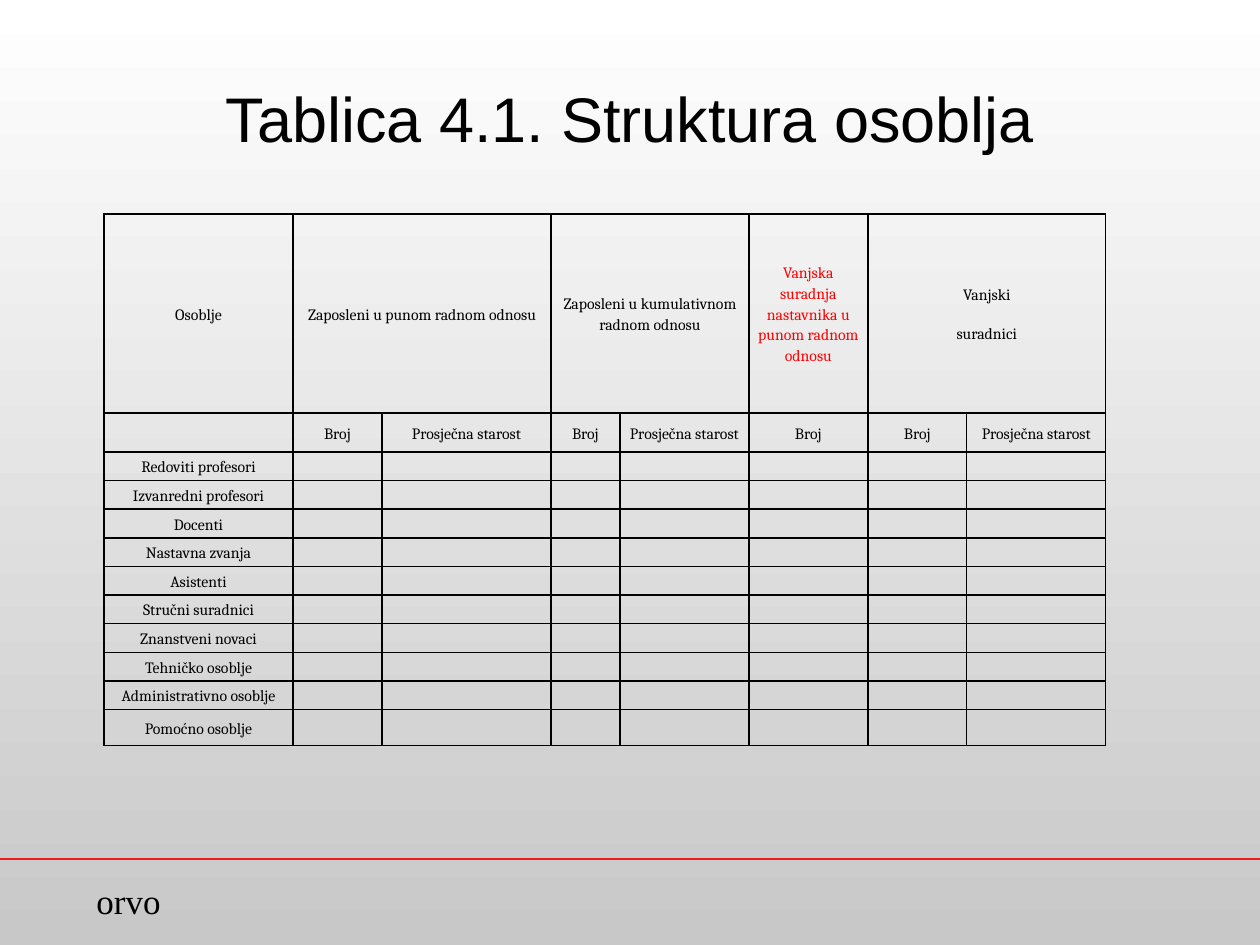
from lxml.etree import SubElement
from pptx import Presentation
from pptx.dml.color import RGBColor
from pptx.enum.shapes import MSO_CONNECTOR as Connector
from pptx.enum.text import MSO_ANCHOR as Anchor, PP_ALIGN as Align
from pptx.oxml.ns import qn
from pptx.util import Pt

BLACK = RGBColor(0, 0, 0)
RED = RGBColor(0xFF, 0, 0)
RULE_RED = RGBColor(0xEE, 0x1C, 0x1B)
WHITE = RGBColor(0xFF, 0xFF, 0xFF)
GREY = RGBColor(0xC8, 0xC8, 0xC8)

TITLE = "Tablica 4.1. Struktura osoblja"
AGENCY = "orvo"
GROUPS = [
    ("Osoblje", 1, BLACK),
    ("Zaposleni u punom radnom odnosu", 2, BLACK),
    ("Zaposleni u kumulativnom radnom odnosu", 2, BLACK),
    ("Vanjska suradnja nastavnika u punom radnom odnosu", 1, RED),
    ("Vanjski\nsuradnici", 2, BLACK),
]
MEASURES = ["", "Broj", "Prosječna starost", "Broj", "Prosječna starost",
            "Broj", "Broj", "Prosječna starost"]
STAFF = ["Redoviti profesori", "Izvanredni profesori", "Docenti",
         "Nastavna zvanja", "Asistenti", "Stručni suradnici",
         "Znanstveni novaci", "Tehničko osoblje",
         "Administrativno osoblje", "Pomoćno osoblje"]

PX = 914400 // 126
COLUMN_EDGES = [104, 293, 382, 551, 620, 749, 868, 967, 1106]
GROUP_TOP, MEASURE_TOP, STAFF_TOP, LAST_TOP, BOTTOM = 214, 413, 452, 710, 746
STAFF_STEP = (LAST_TOP - STAFF_TOP) / (len(STAFF) - 1)
ROW_EDGES = [GROUP_TOP, MEASURE_TOP,
             *(STAFF_TOP + STAFF_STEP * i for i in range(len(STAFF))), BOTTOM]

CELL_FORMAT = {"margin_left": 9 * PX, "margin_right": 9 * PX, "margin_top": 0,
               "margin_bottom": 0, "vertical_anchor": Anchor.MIDDLE}
CELL_PARAGRAPH = {"alignment": Align.CENTER, "line_spacing": 1.15,
                  "space_after": Pt(10)}


def apply(target, values):
    for name, value in values.items():
        setattr(target, name, value)


def set_font(run, face, size, color):
    apply(run.font, {"name": face, "size": Pt(size), "bold": False})
    run.font.color.rgb = color


def add_label(slide, text, box, face, size, align, anchor):
    frame = slide.shapes.add_textbox(*(v * PX for v in box)).text_frame
    apply(frame, {"word_wrap": True, "vertical_anchor": anchor})
    paragraph = frame.paragraphs[0]
    paragraph.alignment = align
    run = paragraph.add_run()
    run.text = text
    set_font(run, face, size, BLACK)


def add_borders(cell):
    properties = cell._tc.get_or_add_tcPr()
    for side in ("a:lnL", "a:lnR", "a:lnT", "a:lnB"):
        line = SubElement(properties, qn(side), w=str(Pt(1)))
        fill = SubElement(line, qn("a:solidFill"))
        SubElement(fill, qn("a:srgbClr"), val=str(BLACK))


def write_cell(cell, text, color=BLACK):
    cell.text = text
    for paragraph in cell.text_frame.paragraphs:
        apply(paragraph, CELL_PARAGRAPH)
        for run in paragraph.runs:
            set_font(run, "Cambria", 9, color)
        if not text:
            SubElement(paragraph._p, qn("a:endParaRPr"), sz="900")


def add_staff_table(slide):
    left, top = COLUMN_EDGES[0], ROW_EDGES[0]
    table = slide.shapes.add_table(
        len(ROW_EDGES) - 1, len(MEASURES), left * PX, top * PX,
        (COLUMN_EDGES[-1] - left) * PX, (BOTTOM - top) * PX).table
    apply(table, {"first_row": False, "horz_banding": False})
    for column, start, end in zip(table.columns, COLUMN_EDGES, COLUMN_EDGES[1:]):
        column.width = (end - start) * PX
    for row, start, end in zip(table.rows, ROW_EDGES, ROW_EDGES[1:]):
        row.height = round((end - start) * PX)

    for cell in table.iter_cells():
        apply(cell, CELL_FORMAT)
        add_borders(cell)
        cell.fill.background()
        write_cell(cell, "")

    first = 0
    for text, span, color in GROUPS:
        if span > 1:
            table.cell(0, first).merge(table.cell(0, first + span - 1))
        write_cell(table.cell(0, first), text, color)
        first += span
    for index, text in enumerate(MEASURES):
        if text:
            write_cell(table.cell(1, index), text)
    for index, text in enumerate(STAFF, 2):
        write_cell(table.cell(index, 0), text)


def main():
    deck = Presentation()
    apply(deck, {"slide_width": 1260 * PX, "slide_height": 945 * PX})
    slide = deck.slides.add_slide(deck.slide_layouts[6])

    backdrop = slide.background.fill
    backdrop.gradient()
    backdrop.gradient_angle = 270
    for stop, color, position in zip(backdrop.gradient_stops, (WHITE, GREY), (0, 1)):
        stop.color.rgb = color
        stop.position = position

    rule = slide.shapes.add_connector(Connector.STRAIGHT, 0, 859 * PX,
                                      1260 * PX, 859 * PX)
    rule.line.color.rgb = RULE_RED
    rule.line.width = Pt(1)
    SubElement(rule._element.spPr, qn("a:effectLst"))

    add_label(slide, AGENCY, (84, 873, 110, 54), "Times New Roman", 20,
              Align.LEFT, Anchor.TOP)
    add_label(slide, TITLE, (63, 38, 1134, 158), "Arial", 36,
              Align.CENTER, Anchor.MIDDLE)
    add_staff_table(slide)
    deck.save("out.pptx")


if __name__ == "__main__":
    main()
